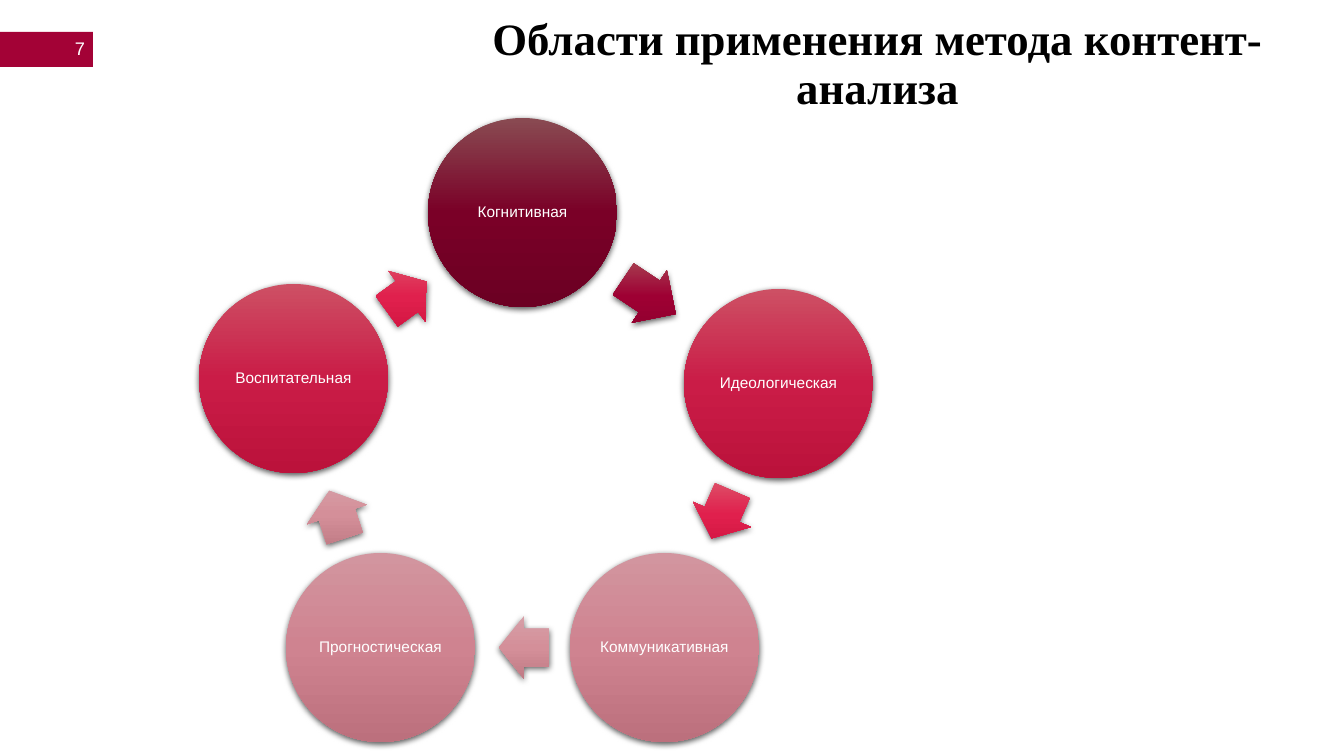
from lxml.etree import SubElement
from pptx import Presentation
from pptx.dml.color import RGBColor
from pptx.enum.shapes import MSO_SHAPE
from pptx.enum.text import MSO_ANCHOR, MSO_AUTO_SIZE, PP_ALIGN
from pptx.oxml.ns import qn
from pptx.util import Emu, Pt

PX_PER_INCH = 100.8
CIRCLE_SIZE = 189
ARROW_HEIGHT = 63

# Gradient stops from top to bottom: circle, then the arrow leaving it
DARK = (("894B52", "7A0027", "6C0023"), ("A84B57", "9E0033", "8C002D"))
BRIGHT = (("CD5064", "CA1C47", "BB123B"), ("DD536A", "E0204D", "D01440"))
PALE = (("D2959F", "CF8390", "BC707D"), ("D69FA7", "D48F99", "C07B85"))

# Label, circle corner, palette, arrow corner, arrow width, arrow rotation
CYCLE = [
    ("Когнитивная", (428, 118), DARK, (618, 265), 63, 33.7),
    ("Идеологическая", (684, 289), BRIGHT, (696, 483), 52, 113.5),
    ("Коммуникативная", (570, 553), PALE, (499, 616), 50, 180),
    ("Прогностическая", (286, 553), PALE, (312, 483), 50, 252),
    ("Воспитательная", (199, 284), BRIGHT, (382, 265), 50, 324),
]


def px(length):
    return Emu(round(length * 914400 / PX_PER_INCH))


def rgb(value):
    return RGBColor.from_string(value)


class SlideBuilder:
    body_font = "Arial"
    title_font = "Times New Roman"

    def __init__(self, slide):
        self.slide = slide

    def add_title(self, text, left, top, width, height):
        title = self.slide.shapes.title
        title.left, title.top = px(left), px(top)
        title.width, title.height = px(width), px(height)
        self.set_text(title, text, self.title_font, 32, "000000",
                      anchor=MSO_ANCHOR.TOP, bold=True)
        title.text_frame.word_wrap = True

    def add_page_number(self, text, left, top, width, height, color):
        tab = self.add_plain_shape(MSO_SHAPE.RECTANGLE, left, top, width, height)
        tab.shadow.inherit = False
        tab.fill.solid()
        tab.fill.fore_color.rgb = rgb(color)
        self.set_text(tab, text, self.body_font, 13, "FFFFFF",
                      alignment=PP_ALIGN.RIGHT, inset=8)

    def add_circle(self, label, left, top, colors):
        circle = self.add_plain_shape(MSO_SHAPE.OVAL, left, top, CIRCLE_SIZE, CIRCLE_SIZE)
        self.add_gradient_and_shadow(circle, colors)
        self.set_text(circle, label, self.body_font, 11, "FFFFFF", inset=2)

    def add_arrow(self, left, top, width, rotation, colors):
        arrow = self.add_plain_shape(MSO_SHAPE.RIGHT_ARROW, left, top, width, ARROW_HEIGHT)
        arrow.adjustments[0], arrow.adjustments[1] = 0.6, 0.5
        arrow.rotation = rotation
        self.add_gradient_and_shadow(arrow, colors)

    def add_plain_shape(self, kind, left, top, width, height):
        shape = self.slide.shapes.add_shape(kind, px(left), px(top), px(width), px(height))
        shape.line.fill.background()
        return shape

    def add_gradient_and_shadow(self, shape, colors):
        """Fill from top to bottom whatever the rotation, with a soft shadow below."""
        properties = shape._element.spPr
        gradient = SubElement(properties, qn("a:gradFill"), rotWithShape="0")
        properties.find(qn("a:ln")).addprevious(gradient)
        stops = SubElement(gradient, qn("a:gsLst"))
        for index, color in enumerate(colors):
            stop = SubElement(stops, qn("a:gs"), pos=str(index * 50000))
            SubElement(stop, qn("a:srgbClr"), val=color)
        SubElement(gradient, qn("a:lin"), ang="5400000", scaled="0")

        effects = SubElement(properties, qn("a:effectLst"))
        shadow = SubElement(effects, qn("a:outerShdw"), blurRad=str(Pt(4.5)),
                            dist=str(Pt(1.5)), dir="5400000", rotWithShape="0")
        shadow_color = SubElement(shadow, qn("a:srgbClr"), val="000000")
        SubElement(shadow_color, qn("a:alpha"), val="63000")

    def set_text(self, shape, text, font, size, color, alignment=PP_ALIGN.CENTER,
                 anchor=MSO_ANCHOR.MIDDLE, inset=0, bold=False):
        frame = shape.text_frame
        frame.text = text
        frame.auto_size = MSO_AUTO_SIZE.NONE
        frame.word_wrap = False
        frame.vertical_anchor = anchor
        frame.margin_left = frame.margin_right = px(inset)
        frame.margin_top = frame.margin_bottom = px(0)
        paragraph = frame.paragraphs[0]
        paragraph.alignment = alignment
        paragraph.line_spacing = 0.9
        run_font = paragraph.runs[0].font
        run_font.name, run_font.size, run_font.bold = font, Pt(size), bold
        run_font.color.rgb = rgb(color)


def main():
    presentation = Presentation()
    presentation.slide_width, presentation.slide_height = px(1344), px(756)
    title_only = presentation.slide_layouts[5]
    builder = SlideBuilder(presentation.slides.add_slide(title_only))

    builder.add_page_number("7", 0, 32, 93, 35, "A30236")
    builder.add_title("Области применения метода контент-анализа", 437, 17, 881, 87)
    for label, circle, palette, arrow, arrow_width, rotation in CYCLE:
        circle_colors, arrow_colors = palette
        builder.add_circle(label, *circle, circle_colors)
        builder.add_arrow(*arrow, arrow_width, rotation, arrow_colors)

    presentation.save("out.pptx")


if __name__ == "__main__":
    main()
